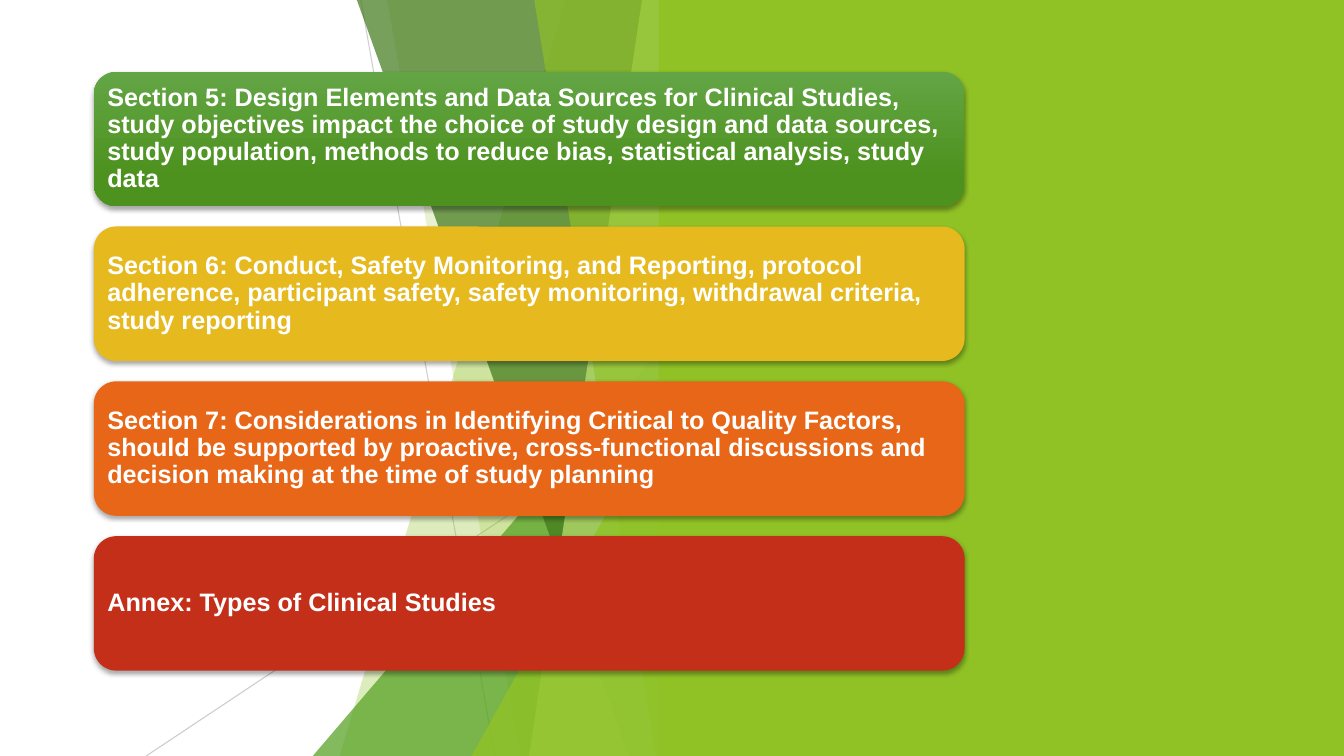
from pptx import Presentation
from pptx.dml.color import RGBColor
from pptx.enum.shapes import MSO_CONNECTOR, MSO_SHAPE
from pptx.enum.text import MSO_ANCHOR, PP_ALIGN
from pptx.oxml.ns import qn
from pptx.util import Pt
from lxml.etree import SubElement

WIDE, HIGH = 960, 540
MID = 480

RAYS = [(257.8, 0, 353.5, HIGH, 75), (MID, 290.2, 104.4, HIGH, 80)]
BACK = [(404, 242.6, "90C226", 30), (276.5, 371.5, "90C226", 20)]
FRONT = [(254.9, 449.3, "3F7819", 70), (458.6, 378, "C0E474", 70),
         (381.6, 468.7, "90C226", 65)]
CARDS = [
    ("Section 5: Design Elements and Data Sources for Clinical Studies, "
     "study objectives impact the choice of study design and data sources, "
     "study population, methods to reduce bias, statistical analysis, study data",
     ("63A545", "4D921E")),
    ("Section 6: Conduct, Safety Monitoring, and Reporting, protocol "
     "adherence, participant safety, safety monitoring, withdrawal criteria, "
     "study reporting", ("E6B91E",)),
    ("Section 7: Considerations in Identifying Critical to Quality Factors, "
     "should be supported by proactive, cross-functional discussions and "
     "decision making at the time of study planning", ("E76618",)),
    ("Annex: Types of Clinical Studies", ("C42F1A",)),
]


def color(code):
    return RGBColor.from_string(code)


def fade(part, alpha):
    tone = next(part.iter(qn("a:srgbClr")))
    SubElement(tone, qn("a:alpha"), val=str(alpha * 1000))


class Deck:
    font = "Arial"
    size = 18
    ink = "FFFFFF"
    gray = "BFBFBF"

    def __init__(self):
        self.show = Presentation()
        self.show.slide_width = Pt(WIDE)
        self.show.slide_height = Pt(HIGH)
        self.slide = self.show.slides.add_slide(self.show.slide_layouts[6])
        self.shapes = self.slide.shapes

    def paint(self, shape, code, alpha=100):
        shape.shadow.inherit = False
        shape.line.fill.background()
        shape.fill.solid()
        shape.fill.fore_color.rgb = color(code)
        if alpha < 100:
            fade(shape._element.spPr, alpha)

    def ray(self, x1, y1, x2, y2, alpha):
        line = self.shapes.add_connector(
            MSO_CONNECTOR.STRAIGHT, Pt(x1), Pt(y1), Pt(x2), Pt(y2))
        line.line.color.rgb = color(self.gray)
        line.line.width = Pt(0.75)
        fade(line._element.spPr, alpha)
        SubElement(line._element.spPr, qn("a:effectLst"))

    def wedge(self, top, foot, code, alpha):
        form = self.shapes.build_freeform(Pt(top), 0)
        form.add_line_segments(
            [(Pt(MID), 0), (Pt(MID), Pt(HIGH)), (Pt(foot), Pt(HIGH))])
        self.paint(form.convert_to_shape(), code, alpha)

    def peak(self, left, top, code, alpha):
        shape = self.shapes.add_shape(
            MSO_SHAPE.ISOSCELES_TRIANGLE, Pt(left), Pt(top),
            Pt(MID - left), Pt(HIGH - top))
        shape.adjustments[0] = 1
        self.paint(shape, code, alpha)

    def panel(self, left, code):
        shape = self.shapes.add_shape(
            MSO_SHAPE.RECTANGLE, Pt(left), 0, Pt(WIDE - left), Pt(HIGH))
        self.paint(shape, code)

    def shade(self, shape):
        glow = shape._element.spPr.find(qn("a:effectLst"))
        drop = SubElement(glow, qn("a:outerShdw"), blurRad=str(Pt(3)),
                          dist=str(Pt(2)), dir="5400000", rotWithShape="0")
        SubElement(drop, qn("a:srgbClr"), val="000000")
        fade(drop, 35)

    def card(self, top, text, tones):
        shape = self.shapes.add_shape(
            MSO_SHAPE.ROUNDED_RECTANGLE, Pt(67), Pt(top), Pt(622), Pt(96))
        self.paint(shape, tones[0])
        if len(tones) > 1:
            shape.fill.gradient()
            shape.fill.gradient_angle = 270
            for stop, tone, place in zip(shape.fill.gradient_stops, tones, (0, 0.78)):
                stop.color.rgb = color(tone)
                stop.position = place
        self.shade(shape)
        self.label(shape.text_frame, text)

    def label(self, frame, text):
        frame.word_wrap = True
        frame.vertical_anchor = MSO_ANCHOR.MIDDLE
        frame.margin_left = frame.margin_right = Pt(5)
        frame.margin_top = frame.margin_bottom = Pt(5)
        line = frame.paragraphs[0]
        line.text = text
        line.alignment = PP_ALIGN.LEFT
        line.line_spacing = 0.9
        line.font.name = self.font
        line.font.size = Pt(self.size)
        line.font.bold = True
        line.font.color.rgb = color(self.ink)


def main():
    deck = Deck()
    for ray in RAYS:
        deck.ray(*ray)
    for wedge in BACK:
        deck.wedge(*wedge)
    deck.peak(223.4, 240, "54A021", 72)
    for wedge in FRONT:
        deck.wedge(*wedge)
    deck.peak(336.8, 282.8, "90C226", 80)
    deck.panel(470.6, "90C226")
    for row, (text, tones) in enumerate(CARDS):
        deck.card(51.2 + row * 110.6, text, tones)
    deck.show.save("out.pptx")


if __name__ == "__main__":
    main()
